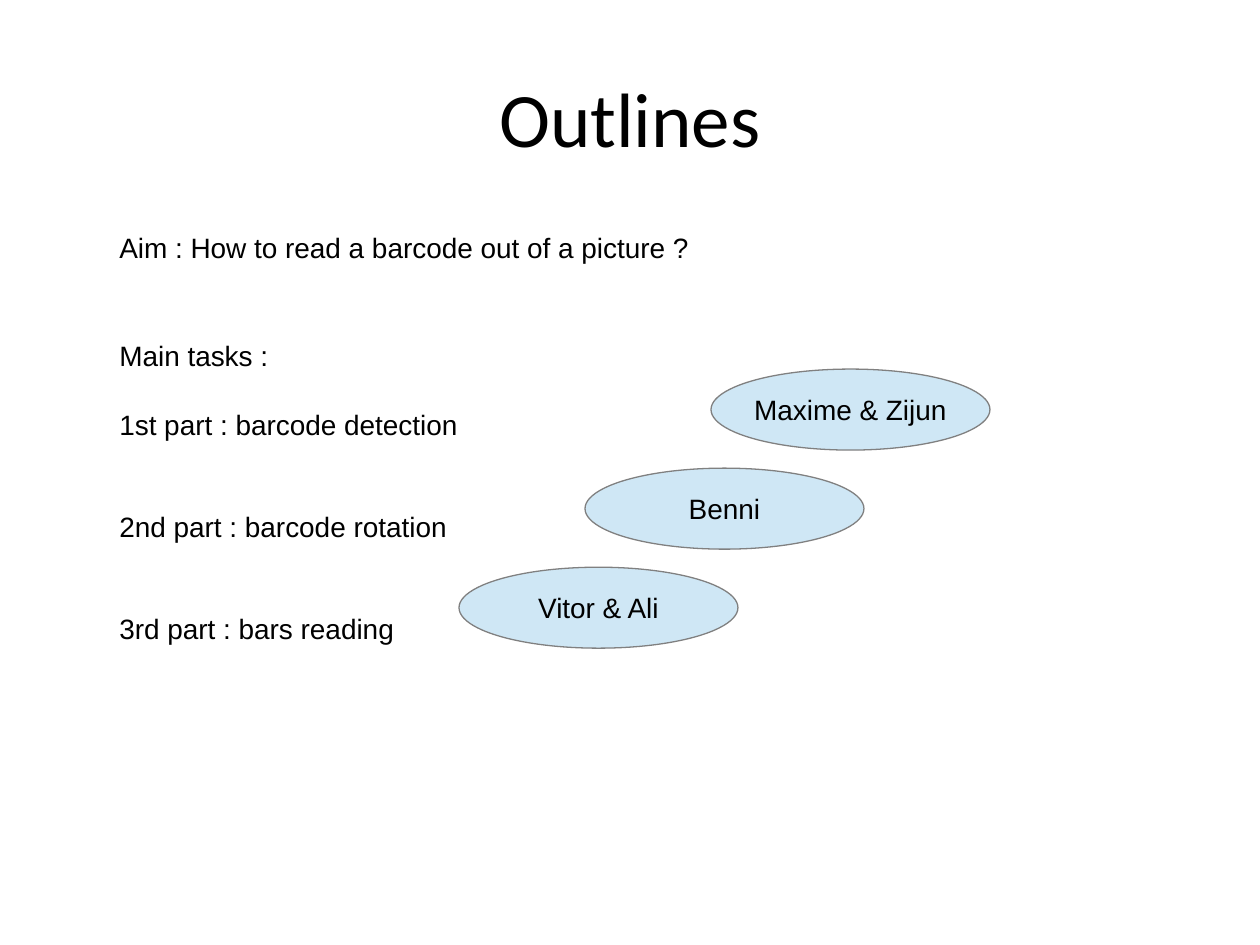
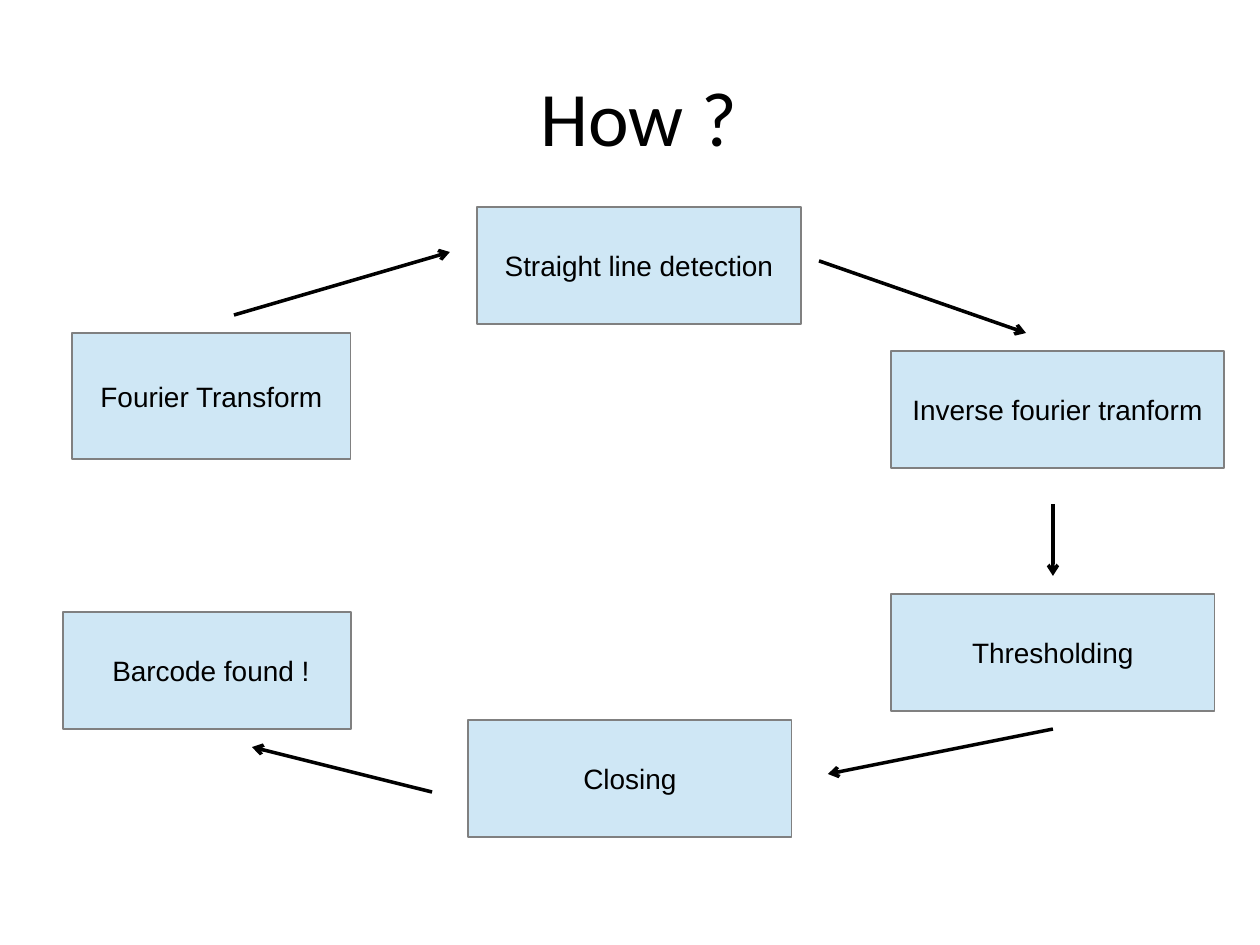
"""Build the two slides on reading a barcode: the outline and the processing cycle."""
from lxml import etree
from pptx import Presentation
from pptx.dml.color import RGBColor
from pptx.enum import shapes, text
from pptx.oxml import ns
from pptx.util import Pt

BLACK = RGBColor(0x00, 0x00, 0x00)
GREY = RGBColor(0x80, 0x80, 0x80)
PALE_BLUE = RGBColor(0xCF, 0xE7, 0xF5)


def write(tf, words, size=16, font="Arial", align=text.PP_ALIGN.CENTER,
          anchor=text.MSO_ANCHOR.MIDDLE, wrap=False, gaps=()):
    tf.word_wrap = wrap
    tf.vertical_anchor = anchor
    tf.margin_left = tf.margin_right = Pt(6.5)
    tf.margin_top = tf.margin_bottom = Pt(3)
    for i, line in enumerate(words.split("\n")):
        p = tf.add_paragraph() if i else tf.paragraphs[0]
        p.alignment = align
        if gaps:
            p.space_before = Pt(gaps[i])
        r = p.add_run()
        r.text = line
        r.font.name, r.font.size = font, Pt(size)
        r.font.color.rgb = BLACK


def add_label(s, kind, words, left, top, width, height):
    sp = s.shapes.add_shape(kind, Pt(left), Pt(top), Pt(width), Pt(height))
    sp.shadow.inherit = False
    sp.fill.solid()
    sp.fill.fore_color.rgb = PALE_BLUE
    sp.line.color.rgb = GREY
    sp.line.width = Pt(0)
    write(sp.text_frame, words)


prs = Presentation()
prs.slide_width, prs.slide_height = Pt(720), Pt(540)

slides = []
for words, left, top in [("Outlines", 36, 21.6), ("How ?", 41.1, 20.9)]:
    s = prs.slides.add_slide(prs.slide_layouts[5])
    title = s.shapes.title
    title.left, title.top, title.width, title.height = Pt(left), Pt(top), Pt(648), Pt(90)
    write(title.text_frame, words, size=44, font="Calibri", wrap=True)
    slides.append(s)
outline, cycle = slides

tasks = "Main tasks :\n1st part : barcode detection\n2nd part : barcode rotation\n3rd part : bars reading"
for words, top, width, height, gaps in [
    ("Aim : How to read a barcode out of a picture ?", 128.6, 342.7, 61.7, ()),
    (tasks, 190.3, 208.8, 173.5, (0, 20.5, 39, 39)),
]:
    sp = outline.shapes.add_textbox(Pt(61.7), Pt(top), Pt(width), Pt(height))
    write(sp.text_frame, words, align=text.PP_ALIGN.LEFT, anchor=text.MSO_ANCHOR.TOP, gaps=gaps)

for i, names in enumerate(["Maxime & Zijun", "Benni", "Vitor & Ali"]):
    add_label(outline, shapes.MSO_SHAPE.OVAL, names, 406.3 - 72 * i, 210.9 + 56.6 * i, 159.4, 46.3)

STEPS = [
    ("Fourier Transform", 41.1, 190.3, 159.4, 72),
    ("Straight line detection", 272.6, 118.3, 185.1, 66.9),
    ("Inverse fourier tranform", 509.1, 200.6, 190.3, 66.9),
    ("Thresholding", 509.1, 339.4, 185.1, 66.9),
    ("Closing", 267.4, 411.4, 185.1, 66.9),
    (" Barcode found !", 36, 349.7, 164.6, 66.9),
]
for step in STEPS:
    add_label(cycle, shapes.MSO_SHAPE.RECTANGLE, *step)

ARROWS = [
    (601.7, 288, 601.7, 329.1),
    (601.7, 416.6, 473.1, 442.3),
    (246.9, 452.6, 144, 426.9),
    (133.7, 180, 257.1, 144),
    (468, 149.1, 586.3, 190.3),
]
for ends in ARROWS:
    arrow = cycle.shapes.add_connector(shapes.MSO_CONNECTOR.STRAIGHT, *map(Pt, ends))
    arrow.line.color.rgb = BLACK
    arrow.line.width = Pt(0)
    etree.SubElement(arrow.line._get_or_add_ln(), ns.qn("a:tailEnd"), type="arrow")
    etree.SubElement(arrow._element.spPr, ns.qn("a:effectLst"))

prs.save("out.pptx")
